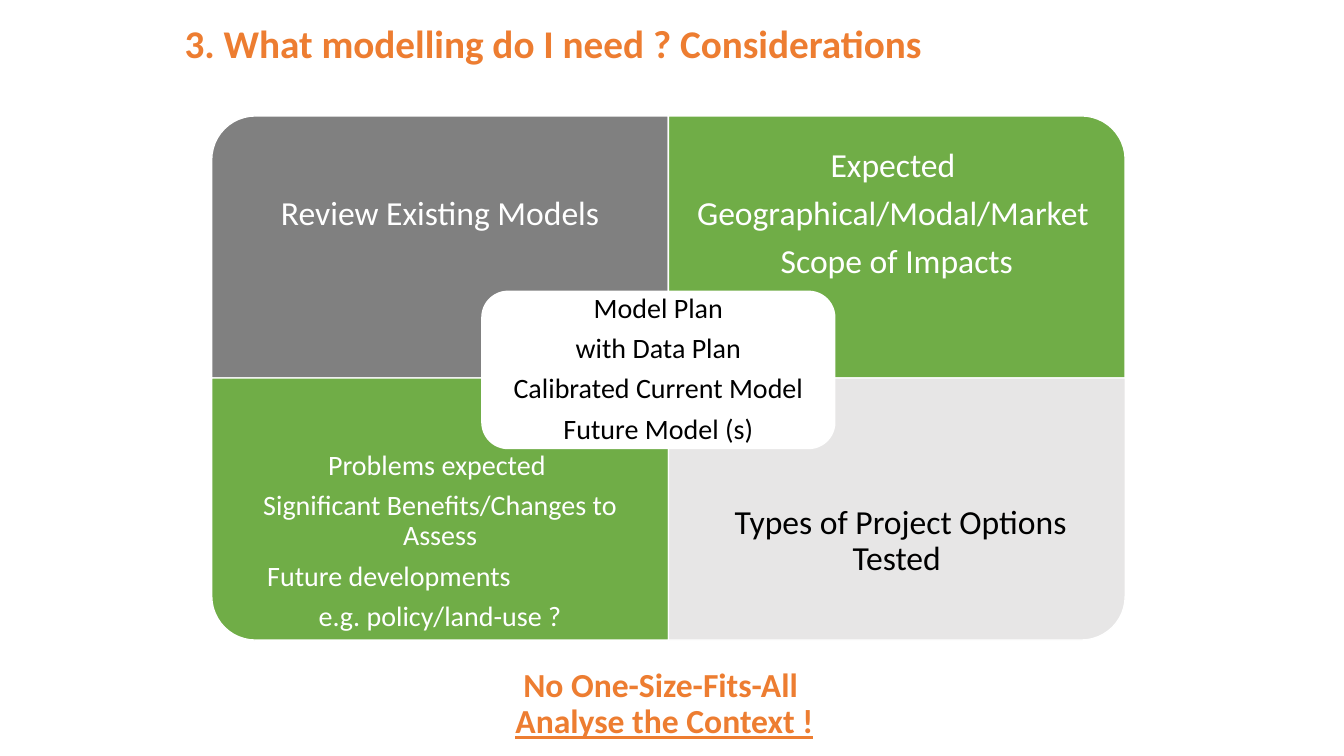
from pptx import Presentation
from pptx import util as u
from pptx.dml.color import RGBColor
from pptx.enum import shapes, text

ORANGE = RGBColor(0xED, 0x7D, 0x31)
GREEN = RGBColor(0x70, 0xAD, 0x47)
GREY = RGBColor(0x80, 0x80, 0x80)
PALE = RGBColor(0xE7, 0xE6, 0xE6)
WHITE = RGBColor(0xFF, 0xFF, 0xFF)
BLACK = RGBColor(0, 0, 0)

HEADING = "3. What modelling do I need ? Considerations"
CONCLUSION = "No One-Size-Fits-All \vAnalyse the Context !"
INDENTED = "Future developments"
QUADRANTS = [
    (0, 0, 270, GREY, WHITE, 24, ["Review Existing Models"]),
    (1, 0, 0, GREEN, WHITE, 24,
     ["Expected ", "Geographical/Modal/Market ", "Scope of Impacts"]),
    (0, 1, 180, GREEN, WHITE, 20,
     ["Problems expected ", "Significant Benefits/Changes to Assess",
      INDENTED, "e.g. policy/land-use ?"]),
    (1, 1, 90, PALE, BLACK, 24, [" Types of Project Options Tested"]),
]
PLAN = ["Model Plan", "with Data Plan", "Calibrated Current Model", "Future Model (s)"]

SLIDE_W, SLIDE_H = 13.33, 7.5
LEFT, TOP = 2.1, 1.15
COL_W, ROW_H = 4.53, 2.6
LABEL_H = ROW_H * 0.75
PLAN_W, PLAN_H = 3.5, 1.56


def box(left, top, width, height):
    return [u.Inches(v) for v in (left, top, width, height)]


def place(item, *bounds):
    item.left, item.top, item.width, item.height = box(*bounds)


def style(paragraph, size, color, bold=False):
    for run in paragraph.runs:
        run.font.name = "Calibri"
        run.font.size = u.Pt(size)
        run.font.color.rgb = color
        run.font.bold = bold


def add_panel(slide, preset, bounds, fill, rotation=0):
    panel = slide.shapes.add_shape(preset, *box(*bounds))
    panel.rotation = rotation
    panel.shadow.inherit = False
    panel.fill.solid()
    panel.fill.fore_color.rgb = fill
    panel.line.color.rgb = WHITE
    panel.line.width = u.Pt(1)
    return panel


def write_lines(frame, lines, size, color, inset):
    frame.word_wrap = True
    frame.vertical_anchor = text.MSO_ANCHOR.MIDDLE
    frame.margin_left = frame.margin_right = u.Inches(inset)
    frame.margin_top = frame.margin_bottom = u.Inches(inset)
    frame.text = "\n".join(lines)
    for paragraph in frame.paragraphs:
        paragraph.alignment = text.PP_ALIGN.CENTER
        paragraph.line_spacing = 0.9
        paragraph.space_after = u.Pt(size * 0.35)
        style(paragraph, size, color)
        if paragraph.text == INDENTED:
            paragraph.alignment = text.PP_ALIGN.LEFT
            paragraph._p.get_or_add_pPr().set("marL", str(u.Inches(0.39)))


def add_quadrant(slide, col, row, rotation, fill, color, size, lines):
    left, top = LEFT + col * COL_W, TOP + row * ROW_H
    width, height = (ROW_H, COL_W) if rotation % 180 else (COL_W, ROW_H)
    bounds = (left + (COL_W - width) / 2, top + (ROW_H - height) / 2, width, height)
    add_panel(slide, shapes.MSO_SHAPE.ROUND_1_RECTANGLE, bounds, fill, rotation)
    label_top = top + row * (ROW_H - LABEL_H)
    label = slide.shapes.add_textbox(*box(left, label_top, COL_W, LABEL_H))
    write_lines(label.text_frame, lines, size, color, size / 125)


def add_heading(slide):
    heading = slide.shapes.title
    place(heading, 1.23, 0.14, 9.29, 0.57)
    frame = heading.text_frame
    frame.text = HEADING
    frame.auto_size = text.MSO_AUTO_SIZE.NONE
    frame.vertical_anchor = text.MSO_ANCHOR.TOP
    frame.margin_left = u.Inches(0.6)
    frame.paragraphs[0].alignment = text.PP_ALIGN.LEFT
    style(frame.paragraphs[0], 28, ORANGE, True)


def add_conclusion(slide):
    conclusion = slide.shapes.add_textbox(*box(2.34, 6.19, 8.5, 1.21))
    frame = conclusion.text_frame
    frame.word_wrap = True
    frame.vertical_anchor = text.MSO_ANCHOR.BOTTOM
    frame.text = CONCLUSION
    closing = frame.paragraphs[0]
    closing.alignment = text.PP_ALIGN.CENTER
    closing.line_spacing = 0.9
    style(closing, 24, ORANGE, True)
    closing.runs[-1].font.underline = True


def main():
    deck = Presentation()
    deck.slide_width, deck.slide_height = u.Inches(SLIDE_W), u.Inches(SLIDE_H)
    slide = deck.slides.add_slide(deck.slide_layouts[5])
    add_heading(slide)
    for quadrant in QUADRANTS:
        add_quadrant(slide, *quadrant)
    plan_bounds = (4.78, 2.89, PLAN_W, PLAN_H)
    plan = add_panel(slide, shapes.MSO_SHAPE.ROUNDED_RECTANGLE, plan_bounds, WHITE)
    write_lines(plan.text_frame, PLAN, 20, BLACK, 0.08)
    add_conclusion(slide)
    deck.save("out.pptx")


if __name__ == "__main__":
    main()
